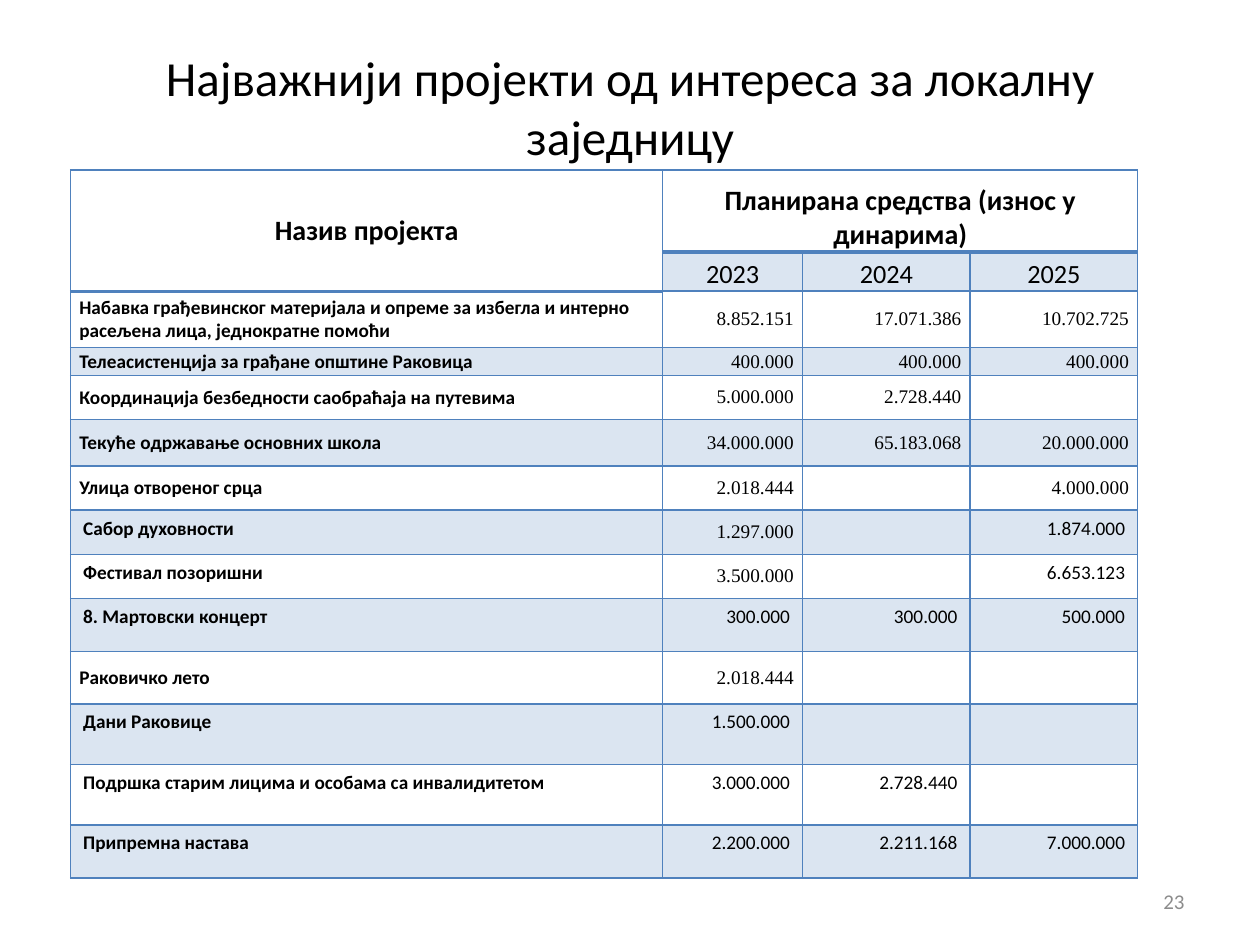
"""Build a slide with a table of local community projects and their planned funds."""
from typing import NamedTuple

from lxml.etree import SubElement
from pptx import Presentation
from pptx.dml.color import RGBColor
from pptx.enum.text import MSO_ANCHOR as Anchor, PP_ALIGN as Align
from pptx.oxml import parse_xml
from pptx.oxml.ns import nsdecls, qn
from pptx.util import Inches, Pt

BLACK = RGBColor(0x00, 0x00, 0x00)
GREY = RGBColor(0x8C, 0x8C, 0x8C)
BLUE = RGBColor(0x4F, 0x81, 0xBD)
BODY, FIGURES = "Calibri", "Times New Roman"
COLUMNS = (4.7, 1.11, 1.33, 1.33)
HEADER_ROWS = (0.65, 0.31)
YEARS = ("2023", "2024", "2025")


class Project(NamedTuple):
    """A table row; layout has T for a tight centred cell and L for a loose top one."""
    height: float
    name: str
    funds: tuple[str, str, str]
    layout: str = "TTTT"


PROJECTS = (
    Project(0.45, "Набавка грађевинског материјала и опреме за избегла и интерно "
            "расељена лица, једнократне помоћи", ("8.852.151", "17.071.386", "10.702.725")),
    Project(0.22, "Телеасистенција за грађане општине Раковица",
            ("400.000", "400.000", "400.000")),
    Project(0.35, "Координација безбедности саобраћаја на путевима",
            ("5.000.000", "2.728.440", "")),
    Project(0.37, "Текуће одржавање основних школа",
            ("34.000.000", "65.183.068", "20.000.000")),
    Project(0.35, "Улица отвореног срца", ("2.018.444", "", "4.000.000")),
    Project(0.35, "Сабор духовности", ("1.297.000", "", "1.874.000"), "LTTL"),
    Project(0.35, "Фестивал позоришни", ("3.500.000", "", "6.653.123"), "LTTL"),
    Project(0.42, "8. Мартовски концерт", ("300.000", "300.000", "500.000"), "LLLL"),
    Project(0.42, "Раковичко лето", ("2.018.444", "", "")),
    Project(0.48, "Дани Раковице", ("1.500.000", "", ""), "LLTT"),
    Project(0.48, "Подршка старим лицима и особама са инвалидитетом",
            ("3.000.000", "2.728.440", ""), "LLLT"),
    Project(0.42, "Припремна настава", ("2.200.000", "2.211.168", "7.000.000"), "LLLL"),
)


def write(tf, text: str, *, size: float, align=Align.LEFT, font: str = BODY,
          bold: bool = False, color: RGBColor = BLACK) -> None:
    """Write one formatted paragraph into a text frame."""
    p = tf.paragraphs[0]
    p.alignment = align
    if not text:
        return
    r = p.add_run()
    r.text = text
    r.font.name, r.font.size, r.font.bold = font, Pt(size), bold
    r.font.color.rgb = color


def place(sp, left: float, top: float, width: float, height: float) -> None:
    """Position a shape in inches."""
    sp.left, sp.top = Inches(left), Inches(top)
    sp.width, sp.height = Inches(width), Inches(height)


def is_thick(row: int, col: int) -> bool:
    """Tell whether a heavy header rule runs below the cell."""
    return row == 0 or (row == 1 and col == 0)


def style_cell(cell, row: int, col: int, *, tight: bool, anchor=Anchor.MIDDLE) -> None:
    """Set margins, anchor, banded fill and borders of a cell."""
    if tight:
        cell.margin_left = cell.margin_right = Inches(0.07)
        cell.margin_top = cell.margin_bottom = 0
        cell.vertical_anchor = anchor
    banded = row % 2 == 1 and (row > 1 or col > 0)
    if banded:
        cell.fill.solid()
        cell.fill.fore_color.rgb = BLUE
    else:
        cell.fill.background()
    tc_pr = cell._tc.get_or_add_tcPr()
    if banded:
        SubElement(tc_pr.find(".//" + qn("a:srgbClr")), qn("a:alpha"), val="20000")
    widths = (1, 1, 1 + is_thick(row - 1, col), 1 + is_thick(row, col))
    for i, (side, width) in enumerate(zip("LRTB", widths)):
        tc_pr.insert(i, parse_xml(
            f'<a:ln{side} {nsdecls("a")} w="{Pt(width)}"><a:solidFill>'
            f'<a:srgbClr val="{BLUE}"/></a:solidFill></a:ln{side}>'))


def add_projects(slide) -> None:
    """Add the table of projects."""
    heights = HEADER_ROWS + tuple(project.height for project in PROJECTS)
    table = slide.shapes.add_table(
        len(heights), len(COLUMNS), Inches(0.56), Inches(1.35),
        Inches(sum(COLUMNS)), Inches(sum(heights))).table
    table.first_row = table.horz_banding = False
    for column, width in zip(table.columns, COLUMNS):
        column.width = Inches(width)
    for row, height in zip(table.rows, heights):
        row.height = Inches(height)

    for row in range(len(HEADER_ROWS)):
        for col in range(len(COLUMNS)):
            style_cell(table.cell(row, col), row, col, tight=True,
                       anchor=Anchor.BOTTOM if col else Anchor.MIDDLE)
    table.cell(0, 0).merge(table.cell(1, 0))
    table.cell(0, 1).merge(table.cell(0, 3))
    for col, text in enumerate(("Назив пројекта", "Планирана средства (износ у динарима)")):
        write(table.cell(0, col).text_frame, text, size=16, align=Align.CENTER, bold=True)
    for col, year in enumerate(YEARS, 1):
        write(table.cell(1, col).text_frame, year, size=15, align=Align.CENTER)

    for row, project in enumerate(PROJECTS, len(HEADER_ROWS)):
        for col, text in enumerate((project.name, *project.funds)):
            cell = table.cell(row, col)
            tight = project.layout[col] == "T"
            style_cell(cell, row, col, tight=tight)
            write(cell.text_frame, text, size=11, bold=col == 0,
                  align=Align.RIGHT if col else Align.LEFT,
                  font=FIGURES if col and tight else BODY)


def main() -> None:
    """Create and save the presentation."""
    prs = Presentation()
    prs.slide_width, prs.slide_height = Inches(10), Inches(7.5)
    slide = prs.slides.add_slide(prs.slide_layouts[5])
    title = slide.shapes.title
    place(title, 0.5, 0.3, 9, 1.09)
    title.text_frame.vertical_anchor = Anchor.MIDDLE
    write(title.text_frame, "Најважнији пројекти од интереса за локалну заједницу",
          size=28, align=Align.CENTER)
    number = slide.shapes.add_textbox(Inches(7.17), Inches(6.95), Inches(2.33), Inches(0.4))
    number.text_frame.word_wrap = True
    number.text_frame.vertical_anchor = Anchor.MIDDLE
    write(number.text_frame, "23", size=12, align=Align.RIGHT, color=GREY)
    add_projects(slide)
    prs.save("out.pptx")


if __name__ == "__main__":
    main()
